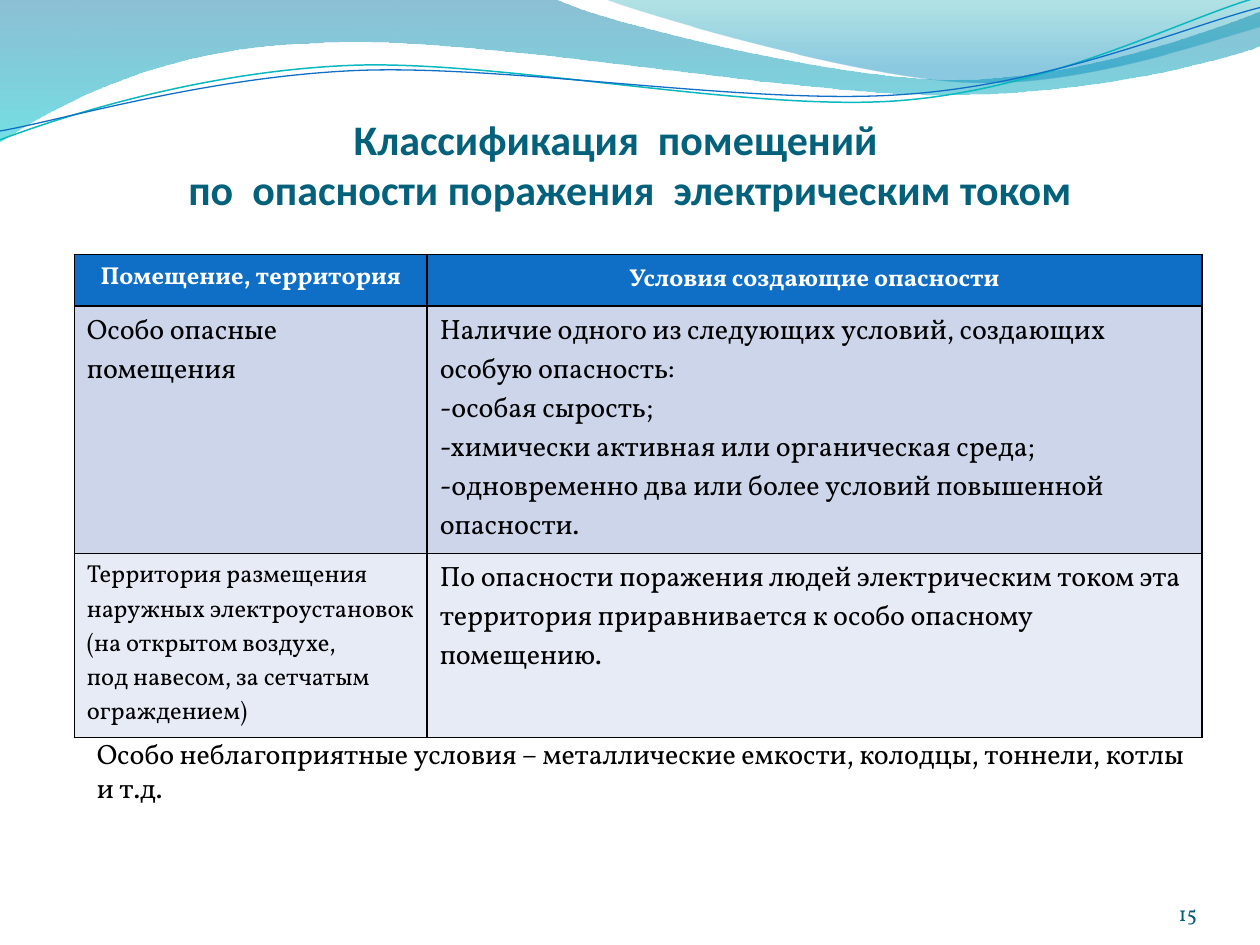
from lxml import etree
from pptx import Presentation
from pptx.dml.color import RGBColor
from pptx.enum import text
from pptx.oxml import parse_xml
from pptx.oxml.ns import nsdecls, qn
from pptx.util import Inches, Pt

SERIF, SANS = "Vollkorn", "Calibri"
BLACK, WHITE, BLUE = "000000", "FFFFFF", "0F6FC6"
CENTER, RIGHT = text.PP_ALIGN.CENTER, text.PP_ALIGN.RIGHT

# Each wave starts at its first point; 2 numbers are a line, 6 are a curve
BROAD_WAVE = [(0, 0), (4.4, -0.01), (4.76, 0.17, 6.64, 0.63, 7.58, 0.63),
              (8.53, 0.63, 9.58, 0.26, 10, 0.09), (10.01, 0.36),
              (9.83, 0.44, 8.7, 0.76, 7.46, 0.75),
              (6.22, 0.75, 3.82, 0.28, 2.57, 0.34),
              (1.29, 0.36, 0.46, 0.83, -0.01, 1.13)]
RIGHT_WAVE = [(4.79, -0.01), (5.09, 0.11, 6.82, 0.62, 7.69, 0.65),
              (8.56, 0.69, 9.61, 0.32, 10, 0.21), (10, 0)]
TEAL_LINE = [(0, 1.11), (0.48, 0.93, 1.58, 0.57, 2.77, 0.52),
             (3.95, 0.47, 5.93, 0.89, 7.13, 0.8),
             (8.33, 0.71, 9.38, 0.15, 9.98, -0.02)]
BLUE_LINE = [(0, 1.04), (0.47, 0.96, 1.64, 0.61, 2.83, 0.56),
             (4.03, 0.51, 5.97, 0.84, 7.17, 0.75),
             (8.36, 0.67, 9.41, 0.21, 10, 0.06)]

HEADINGS = ["Помещение, территория", "Условия создающие опасности"]
ROOMS = [
    ("Особо опасные помещения", 16,
     "Наличие одного из следующих условий, создающих особую опасность:\n"
     "-особая сырость;\n"
     "-химически активная или органическая среда;\n"
     "-одновременно два или более условий повышенной опасности.", "CCD5EA"),
    ("Территория размещения наружных электроустановок\n"
     "(на открытом воздухе,\n"
     "под навесом, за сетчатым ограждением)", 14,
     "По опасности поражения людей электрическим током эта территория "
     "приравнивается к особо опасному помещению.", "E7EBF5"),
]


def rgb(value):
    return RGBColor.from_string(value)


def write(frame, words, size, color, font=SERIF, bold=False, align=None):
    frame.text = words
    for paragraph in frame.paragraphs:
        paragraph.alignment = align
        paragraph.font.name, paragraph.font.size = font, Pt(size)
        paragraph.font.bold = bold
        paragraph.font.color.rgb = rgb(color)


def set_insets(frame, top=0):
    frame.margin_left = frame.margin_right = frame.margin_bottom = 0
    frame.margin_top = Inches(top)


def add_wave(slide, left, top, segments, closed):
    """Draw through the segments' end points, then bend the curved ones."""
    ends = [(Inches(left + segment[-2]), Inches(top + segment[-1])) for segment in segments]
    builder = slide.shapes.build_freeform(*ends[0])
    builder.add_line_segments(ends[1:], close=closed)
    wave = builder.convert_to_shape()
    wave.shadow.inherit = False
    lines = list(wave._element.iter(qn("a:lnTo")))
    for line, segment in zip(lines, segments[1:]):
        if len(segment) == 6:
            line.tag = qn("a:cubicBezTo")
            for index in range(2):
                x, y = segment[2 * index:2 * index + 2]
                control = parse_xml(f'<a:pt {nsdecls("a")} x="{Inches(left + x) - wave.left}" '
                                    f'y="{Inches(top + y) - wave.top}"/>')
                line.insert(index, control)
    return wave


def add_waves(slide, left, top):
    # Shaded bands: position, colour and opacity of each gradient stop
    for segments, stops in [
        (BROAD_WAVE, [(0, "0074A1", 45), (100, "00C6CF", 55)]),
        (RIGHT_WAVE, [(0, "00A1A9", 30), (80, "008BBF", 45)]),
    ]:
        band = add_wave(slide, left, top, segments, True)
        band.line.fill.background()
        stop_list = "".join(
            f'<a:gs pos="{pos * 1000}"><a:srgbClr val="{color}">'
            f'<a:alpha val="{alpha * 1000}"/></a:srgbClr></a:gs>'
            for pos, color, alpha in stops)
        gradient = parse_xml(f'<a:gradFill {nsdecls("a")}><a:gsLst>{stop_list}</a:gsLst>'
                             '<a:lin ang="5400000" scaled="0"/></a:gradFill>')
        band._element.spPr.find(qn("a:custGeom")).addnext(gradient)
    # Thin lines
    for segments, color, width in [(TEAL_LINE, "0AB8BF", 0.85), (BLUE_LINE, BLUE, 0.75)]:
        thread = add_wave(slide, left, top, segments, False)
        thread.fill.background()
        thread.line.color.rgb, thread.line.width = rgb(color), Pt(width)


def add_title(slide, left, top, width, height):
    title = slide.shapes.title
    title.left, title.top = Inches(left), Inches(top)
    title.width, title.height = Inches(width), Inches(height)
    frame = title.text_frame
    set_insets(frame, 0.05)
    frame.auto_size = text.MSO_AUTO_SIZE.NONE
    frame.vertical_anchor = text.MSO_ANCHOR.BOTTOM
    write(frame, "Классификация  помещений   \vпо  опасности поражения  электрическим током",
          24, "04617B", SANS, True, CENTER)
    slide.shapes._spTree.append(title._element)  # in front of the waves


def style_cell(cell, fill, words, size, color=BLACK, bold=False, align=None):
    write(cell.text_frame, words, size, color, bold=bold, align=align)
    properties = cell._tc.get_or_add_tcPr()
    for side in ("lnL", "lnR", "lnT", "lnB"):
        border = etree.SubElement(properties, qn(f"a:{side}"), w=str(Pt(1)))
        solid = etree.SubElement(border, qn("a:solidFill"))
        etree.SubElement(solid, qn("a:srgbClr"), val=BLACK)
    cell.fill.solid()
    cell.fill.fore_color.rgb = rgb(fill)


def add_room_table(slide, left, top, widths, heights):
    table = slide.shapes.add_table(len(heights), len(widths), Inches(left), Inches(top),
                                   Inches(sum(widths)), Inches(sum(heights))).table
    for column, width in zip(table.columns, widths):
        column.width = Inches(width)
    for row, height in zip(table.rows, heights):
        row.height = Inches(height)
    for index, heading in enumerate(HEADINGS):
        style_cell(table.cell(0, index), BLUE, heading, 14, WHITE, True, CENTER)
    table.cell(0, 1).vertical_anchor = text.MSO_ANCHOR.MIDDLE
    for index, (room, size, conditions, fill) in enumerate(ROOMS, 1):
        style_cell(table.cell(index, 0), fill, room, size)
        style_cell(table.cell(index, 1), fill, conditions, 16)


def add_text(slide, left, top, width, height):
    box = slide.shapes.add_textbox(Inches(left), Inches(top), Inches(width), Inches(height))
    box.text_frame.word_wrap = True
    return box.text_frame


def add_remark(slide, left, top, width, height):
    remark = add_text(slide, left, top, width, height)
    remark.auto_size = text.MSO_AUTO_SIZE.SHAPE_TO_FIT_TEXT
    write(remark, "Особо неблагоприятные условия – металлические емкости, колодцы, "
          "тоннели, котлы и т.д.", 16, BLACK)


def add_page_number(slide, left, top, width, height):
    number = add_text(slide, left, top, width, height)
    set_insets(number)
    number.vertical_anchor = text.MSO_ANCHOR.BOTTOM
    write(number, "15", 12, "045D75", align=RIGHT)


def main():
    deck = Presentation()
    deck.slide_width, deck.slide_height = Inches(10), Inches(7.5)
    slide = deck.slides.add_slide(deck.slide_layouts[5])
    add_waves(slide, 0, 0)
    add_room_table(slide, 0.59, 2.02, [2.8, 6.15], [0.41, 1.96, 1.46])
    add_remark(slide, 0.67, 5.8, 8.98, 0.64)
    add_title(slide, 0.5, 0.77, 9, 0.93)
    add_page_number(slide, 8.67, 6.95, 0.83, 0.4)
    deck.save("out.pptx")


if __name__ == "__main__":
    main()
